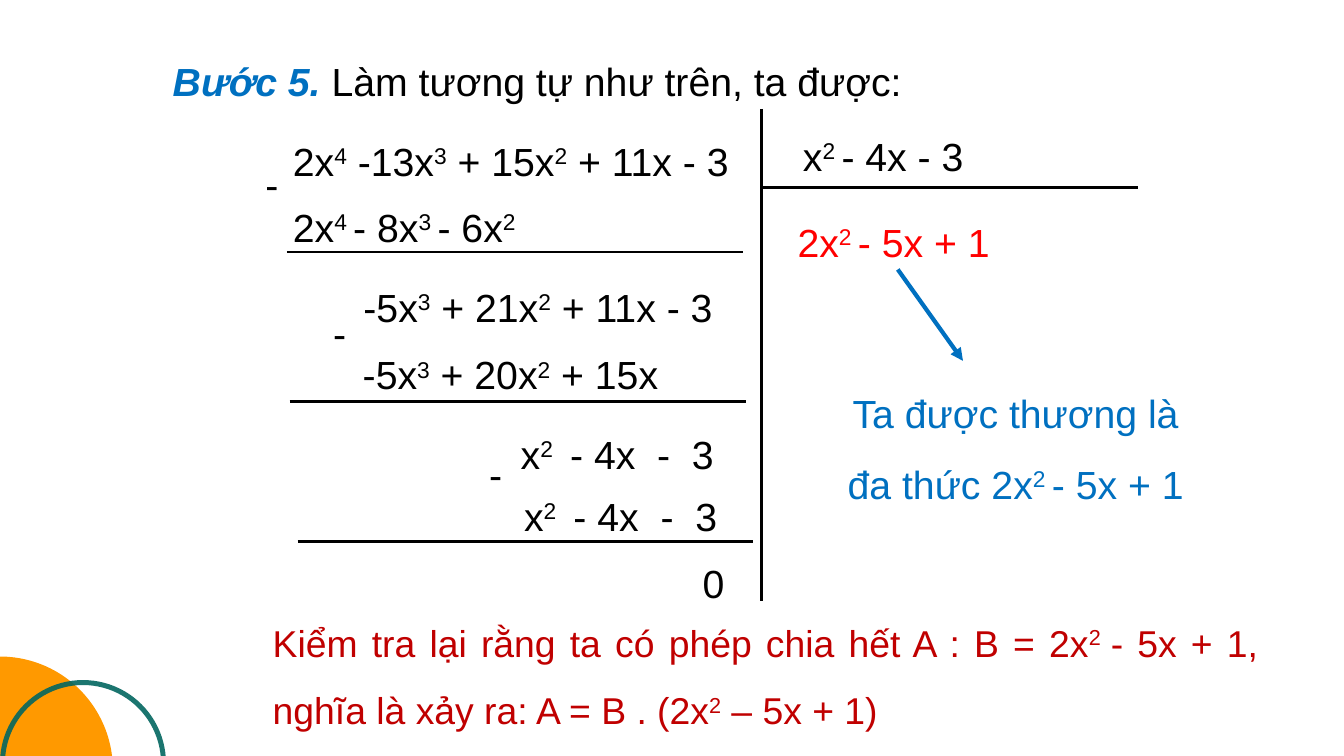
from lxml.etree import SubElement
from pptx import Presentation
from pptx.dml.color import RGBColor
from pptx.enum.shapes import MSO_CONNECTOR, MSO_SHAPE
from pptx.enum.text import MSO_ANCHOR, MSO_AUTO_SIZE, PP_ALIGN
from pptx.oxml.ns import qn
from pptx.util import Pt

PX = 9144
FONT = "Arial"
BLACK = RGBColor(0, 0, 0)
BLUE = RGBColor(0x00, 0x70, 0xC0)
RED = RGBColor(0xFF, 0x00, 0x00)
DARK = RGBColor(0xC0, 0x00, 0x00)
ORANGE = RGBColor(0xFF, 0x99, 0x00)
TEAL = RGBColor(0x03, 0x66, 0x60)

TERMS = [
    (1185, 157, 345, "x^2 ^- 4x - 3", BLACK),
    (426, 164, 710, "2x^4^ -13x^3^ + 15x^2^ + 11x - 3", BLACK),
    (426, 263, 516, "2x^4 ^- 8x^3 ^- 6x^2^", BLACK),
    (1177, 285, 320, "2x^2 ^- 5x + 1", RED),
    (531, 381, 574, "-5x^3^ + 21x^2^ + 11x - 3", BLACK),
    (530, 482, 510, "-5x^3^ + 20x^2^ + 15x", BLACK),
    (765, 600, 344, "x^2 ^ - 4x  -  3", BLACK),
    (770, 692, 344, "x^2 ^ - 4x  -  3", BLACK),
]
SIGNS = [(371, 233), (472, 456), (704, 665)]
RULES = [
    (1133, 162, 1133, 895),
    (1133, 279, 1693, 279),
    (427, 375, 1105, 375),
    (431, 598, 1110, 598),
    (443, 806, 1121, 806),
]


def place(shape, x, y, w, h):
    """Move and size a shape in px."""
    shape.left, shape.top = x * PX, y * PX
    shape.width, shape.height = w * PX, h * PX


def style(run, color, size=42):
    """Set the font of a run."""
    run.font.name = FONT
    run.font.size = Pt(size)
    run.font.color.rgb = color


def space(para, lines=1.5, gap=6):
    """Set the line spacing and the gaps around a paragraph."""
    para.line_spacing = lines
    para.space_before = para.space_after = Pt(gap)


def add_title(slide):
    """Fill the title with a bold label and plain words."""
    title = slide.shapes.title
    place(title, 247, 45, 1485, 116)
    frame = title.text_frame
    frame.auto_size = MSO_AUTO_SIZE.NONE
    frame.vertical_anchor = MSO_ANCHOR.TOP
    para = frame.paragraphs[0]
    para.alignment = PP_ALIGN.JUSTIFY
    space(para)
    label, words = para.add_run(), para.add_run()
    label.text = "Bước 5. "
    words.text = "Làm tương tự như trên, ta được:"
    style(label, BLUE)
    style(words, BLACK)
    label.font.bold = label.font.italic = True


def add_math(slide, box, text, color, align=PP_ALIGN.JUSTIFY, size=42):
    """Add a text box where ^ turns superscript on and off."""
    frame = slide.shapes.add_textbox(*(n * PX for n in box)).text_frame
    frame.word_wrap = True
    para = frame.paragraphs[0]
    para.alignment = align
    for i, part in enumerate(text.split("^")):
        if part:
            run = para.add_run()
            run.text = part
            style(run, color, size)
            if i % 2:
                run.font._element.set("baseline", "30000")
    return para


def add_line(slide, ends, color=BLACK, width=3):
    """Add a straight line without a shadow."""
    line = slide.shapes.add_connector(
        MSO_CONNECTOR.STRAIGHT, *(n * PX for n in ends))
    line.line.color.rgb = color
    line.line.width = Pt(width)
    SubElement(line._element.spPr, qn("a:effectLst"))
    return line


def add_arrow(slide, ends):
    """Add a blue line with a head at its end."""
    arrow = add_line(slide, ends, BLUE, 4.5)
    SubElement(arrow.line._get_or_add_ln(), qn("a:tailEnd"), type="triangle")


def add_round(slide, kind, box, color):
    """Add a filled round shape without an outline."""
    shape = slide.shapes.add_shape(kind, *(n * PX for n in box))
    shape.shadow.inherit = False
    shape.fill.solid()
    shape.fill.fore_color.rgb = color
    shape.line.fill.background()
    return shape


def add_corner(slide):
    """Add the disc and the ring in the lower left corner."""
    add_round(slide, MSO_SHAPE.OVAL, (-168, 977, 336, 337), ORANGE)
    ring = add_round(slide, MSO_SHAPE.DONUT, (0, 1012, 247, 247), TEAL)
    ring.adjustments[0] = 0.03
    tint = ring._element.spPr.find(".//" + qn("a:srgbClr"))
    SubElement(tint, qn("a:alpha"), val="90000")


def add_sums(slide):
    """Add the long division with its signs and rules."""
    for x, y, w, text, color in TERMS:
        space(add_math(slide, (x, y, w, 116), text, color), gap=0)
    for x, y in SIGNS:
        add_math(slide, (x, y, 67, 81), "-", BLACK, PP_ALIGN.CENTER)
    add_math(slide, (940, 827, 148, 81), "0", BLACK, PP_ALIGN.RIGHT)
    for ends in RULES:
        add_line(slide, ends)


def add_notes(slide):
    """Add the quotient note and the closing check."""
    space(add_math(slide, (1226, 540, 571, 209),
                   "Ta được thương là đa thức 2x^2 ^- 5x + 1",
                   BLUE, PP_ALIGN.CENTER))
    space(add_math(slide, (396, 884, 1486, 200),
                   "Kiểm tra lại rằng ta có phép chia hết A : B = 2x^2 ^- 5x + 1, "
                   "nghĩa là xảy ra: A = B . (2x^2^ – 5x + 1)", DARK, size=40))


def main():
    """Build and save the slide."""
    deck = Presentation()
    deck.slide_width, deck.slide_height = 2000 * PX, 1125 * PX
    slide = deck.slides.add_slide(deck.slide_layouts[5])
    add_corner(slide)
    add_title(slide)
    add_sums(slide)
    add_arrow(slide, (1336, 401, 1433, 537))
    add_notes(slide)
    deck.save("out.pptx")


if __name__ == "__main__":
    main()
